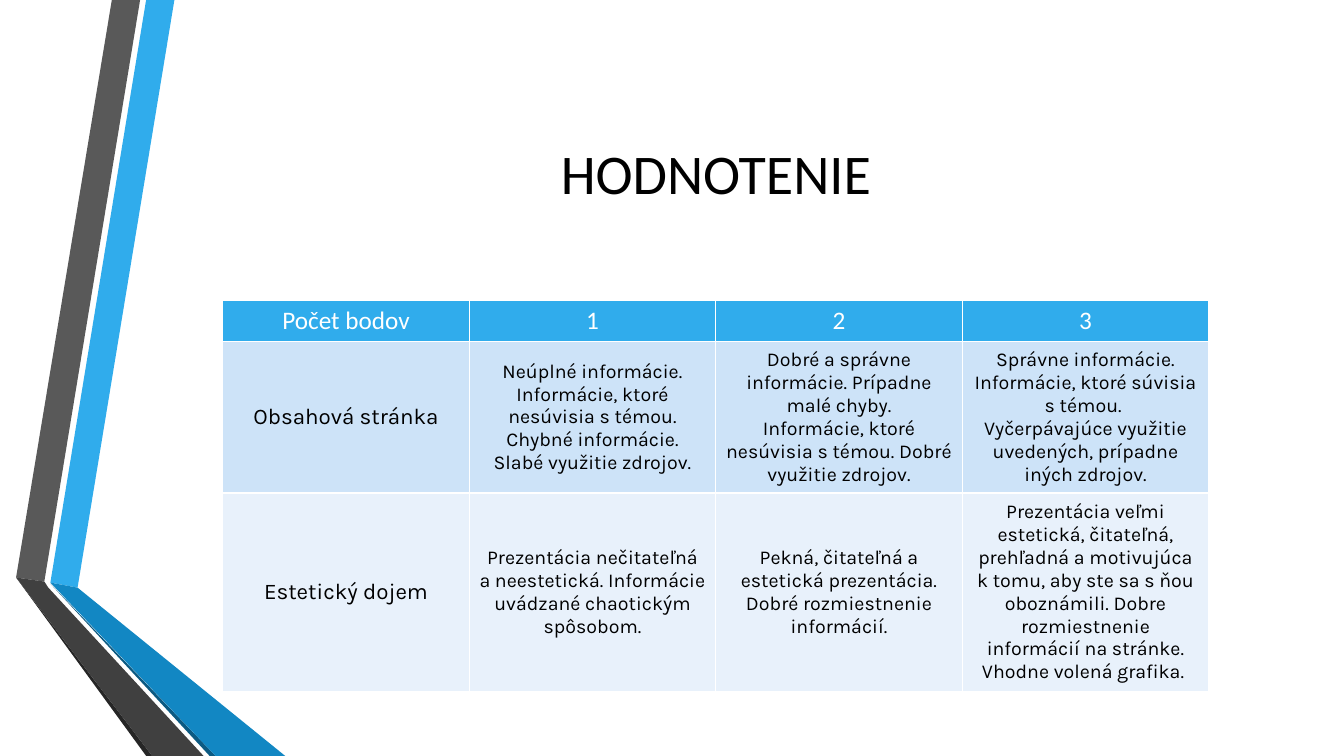
"""Build the grading slide: a bent ribbon on the left, a title and a points table."""
from lxml import etree
from pptx import Presentation
from pptx.dml.color import RGBColor
from pptx.enum.text import MSO_ANCHOR, PP_ALIGN
from pptx.oxml.ns import qn
from pptx.util import Inches, Pt

CENTER = PP_ALIGN.CENTER
MIDDLE, TOP = MSO_ANCHOR.MIDDLE, MSO_ANCHOR.TOP
COLORS = {
    "sky": "30ACEC", "blue": "1287C3", "navy": "0C5A82",
    "gray": "595959", "dark": "404040", "coal": "262626",
    "band": "CDE3F8", "pale": "E8F1FB", "white": "FFFFFF", "black": "000000",
}


def write(frame, lines, size, font, color):
    """Fill a text frame with centred paragraphs."""
    for i, line in enumerate(lines):
        para = frame.paragraphs[0] if i == 0 else frame.add_paragraph()
        para.alignment = CENTER
        run = para.add_run()
        run.text = line
        run.font.size = Pt(size)
        run.font.name = font
        run.font.color.rgb = RGBColor.from_string(COLORS[color])


def edge(cell):
    """Draw thin white lines on all four sides of a cell."""
    props = cell._tc.get_or_add_tcPr()
    for i, side in enumerate(("a:lnL", "a:lnR", "a:lnT", "a:lnB")):
        line = etree.Element(qn(side), w=str(Pt(1)))
        fill = etree.SubElement(line, qn("a:solidFill"))
        etree.SubElement(fill, qn("a:srgbClr"), val=COLORS["white"])
        props.insert(i, line)


prs = Presentation()
prs.slide_width = Inches(13.33)
prs.slide_height = Inches(7.5)
slide = prs.slides.add_slide(prs.slide_layouts[6])

ribbons = [
    ("sky", [(0.5, 5.78), (0.77, 5.83), (1.73, 0), (1.45, 0)]),
    ("gray", [(1.39, 0), (1.11, 0), (0.16, 5.73), (0.44, 5.77)]),
    ("coal", [(0.16, 5.73), (1.45, 7.5), (1.51, 7.5)]),
    ("navy", [(0.5, 5.79), (2.08, 7.5), (2.14, 7.5)]),
    ("blue", [(0.5, 5.78), (2.14, 7.5), (2.83, 7.5), (0.77, 5.83)]),
    ("dark", [(2.02, 7.5), (0.48, 5.83), (0.44, 5.77), (0.16, 5.73), (1.51, 7.5)]),
]
for color, points in ribbons:
    spots = [(Inches(x), Inches(y)) for x, y in points]
    path = slide.shapes.build_freeform(*spots[0])
    path.add_line_segments(spots[1:], close=True)
    ribbon = path.convert_to_shape()
    ribbon.shadow.inherit = False
    ribbon.fill.solid()
    ribbon.fill.fore_color.rgb = RGBColor.from_string(COLORS[color])
    ribbon.line.fill.background()

title = slide.shapes.add_textbox(Inches(1.62), Inches(0.75), Inches(10.96), Inches(1.92))
title.text_frame.word_wrap = True
title.text_frame.vertical_anchor = MIDDLE
write(title.text_frame, ["HODNOTENIE"], 40, "Calibri", "black")

rows = [
    (0.41, "sky", [["Počet bodov"], ["1"], ["2"], ["3"]]),
    (1.46, "band", [
        ["Obsahová stránka"],
        ["Neúplné informácie.",
         "Informácie, ktoré nesúvisia s témou. Chybné informácie.",
         "Slabé využitie zdrojov."],
        ["Dobré a správne informácie. Prípadne malé chyby.",
         "Informácie, ktoré nesúvisia s témou. Dobré využitie zdrojov."],
        ["Správne informácie.",
         "Informácie, ktoré súvisia s témou. ",
         "Vyčerpávajúce využitie uvedených, prípadne iných zdrojov."],
    ]),
    (1.91, "pale", [
        ["Estetický dojem"],
        ["Prezentácia nečitateľná a neestetická. Informácie uvádzané "
         "chaotickým spôsobom."],
        ["Pekná, čitateľná a estetická prezentácia.",
         "Dobré rozmiestnenie informácií."],
        ["Prezentácia veľmi estetická, čitateľná, prehľadná a motivujúca "
         "k tomu, aby ste sa s ňou oboznámili. Dobre rozmiestnenie "
         "informácií na stránke. Vhodne volená grafika. "],
    ]),
]
total = sum(height for height, _, _ in rows)
table = slide.shapes.add_table(
    len(rows), 4, Inches(2.21), Inches(2.98), Inches(9.78), Inches(total)).table
for r, (height, color, texts) in enumerate(rows):
    table.rows[r].height = Inches(height)
    for c, lines in enumerate(texts):
        cell = table.cell(r, c)
        cell.fill.solid()
        cell.fill.fore_color.rgb = RGBColor.from_string(COLORS[color])
        edge(cell)
        cell.vertical_anchor = MIDDLE if r else TOP
        if r == 0:
            write(cell.text_frame, lines, 18, "Calibri", "white")
        else:
            write(cell.text_frame, lines, 14 if c else 16, "Karla", "black")

prs.save("out.pptx")
